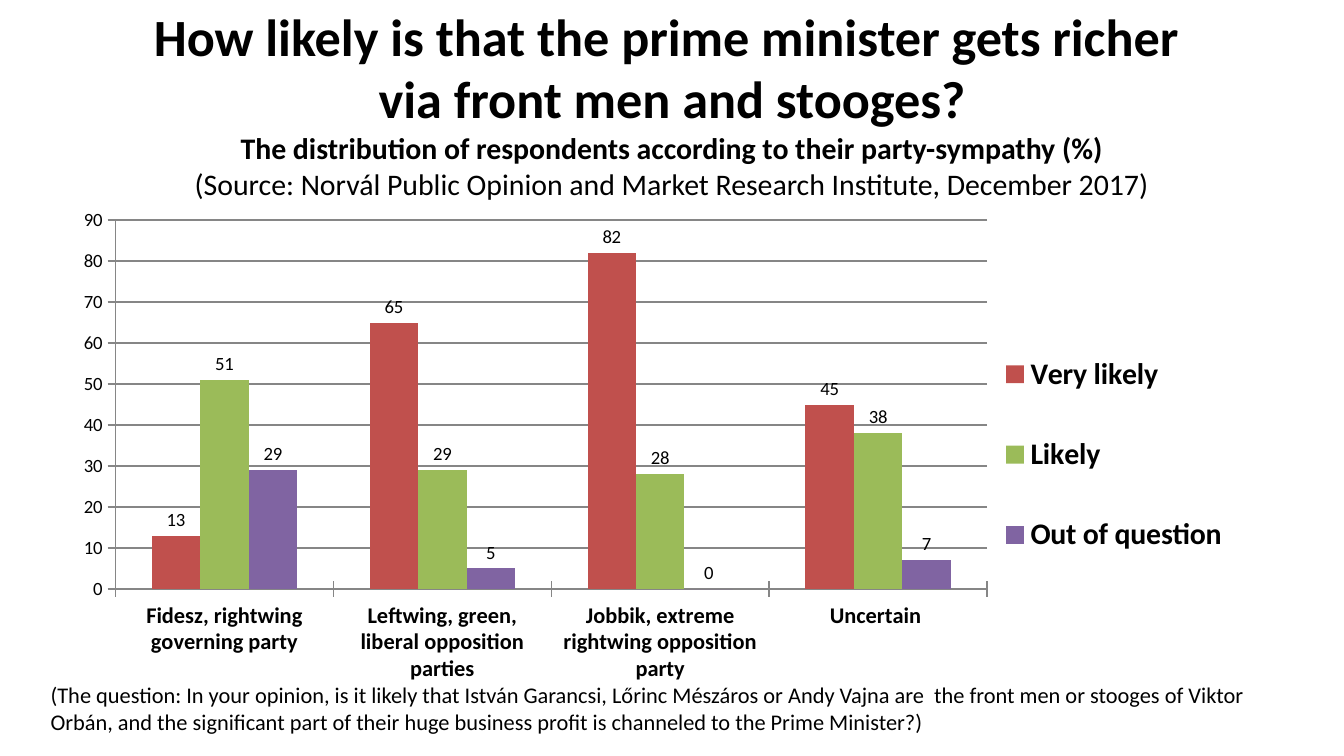
from lxml import etree
from pptx import Presentation
from pptx.chart.data import CategoryChartData
from pptx.dml.color import RGBColor
from pptx.enum.chart import XL_CHART_TYPE, XL_LABEL_POSITION, XL_LEGEND_POSITION, XL_TICK_MARK
from pptx.enum.text import MSO_AUTO_SIZE, PP_ALIGN
from pptx.oxml.ns import qn
from pptx.util import Pt

COLUMN = XL_CHART_TYPE.COLUMN_CLUSTERED
ABOVE = XL_LABEL_POSITION.OUTSIDE_END
RIGHT = XL_LEGEND_POSITION.RIGHT
CROSS = XL_TICK_MARK.CROSS
GROW = MSO_AUTO_SIZE.SHAPE_TO_FIT_TEXT
LEFT, CENTER = PP_ALIGN.LEFT, PP_ALIGN.CENTER

BLACK = RGBColor(0x00, 0x00, 0x00)
GRAY = RGBColor(0x86, 0x86, 0x86)
RED = RGBColor(0xC0, 0x50, 0x4D)
GREEN = RGBColor(0x9B, 0xBB, 0x59)
PURPLE = RGBColor(0x80, 0x64, 0xA2)

PARTIES = [
    "Fidesz, rightwing governing party",
    "Leftwing, green, liberal opposition parties",
    "Jobbik, extreme rightwing opposition party",
    "Uncertain ",
]
ANSWERS = [
    ("Very likely", (13, 65, 82, 45), RED),
    ("Likely", (51, 29, 28, 38), GREEN),
    ("Out of question", (29, 5, 0, 7), PURPLE),
]


def set_layout(part, box, inner=False):
    """Fix a chart part at x, y, w, h, as fractions of the chart."""
    layout = part.find(qn("c:layout"))
    if layout is None:
        layout = etree.Element(qn("c:layout"))
        if inner:
            part.insert(0, layout)
        else:
            part.find(qn("c:legendPos")).addnext(layout)
    manual = etree.SubElement(layout, qn("c:manualLayout"))
    rules = [("layoutTarget", "inner")] if inner else []
    rules += [("xMode", "edge"), ("yMode", "edge")]
    rules += zip("xywh", box)
    for tag, val in rules:
        etree.SubElement(manual, qn(f"c:{tag}")).set("val", str(val))


class Deck:
    def __init__(self, wide, high, face="Calibri", color=BLACK):
        self.prs = Presentation()
        self.prs.slide_width, self.prs.slide_height = Pt(wide), Pt(high)
        self.slide = self.prs.slides.add_slide(self.prs.slide_layouts[6])
        self.face, self.color = face, color

    def style(self, font, size, bold=False):
        font.name, font.size, font.bold = self.face, Pt(size), bold
        font.color.rgb = self.color

    def box(self, x, y, w, h):
        frame = self.slide.shapes.add_textbox(Pt(x), Pt(y), Pt(w), Pt(h)).text_frame
        frame.word_wrap = True
        frame.auto_size = GROW
        return frame

    def text(self, frame, words, size=12, bold=False, align=LEFT):
        """Add a paragraph, using the empty first one when there is one."""
        para = frame.paragraphs[0]
        if para.runs:
            para = frame.add_paragraph()
        para.alignment = align
        run = para.add_run()
        run.text = words
        self.style(run.font, size, bold)

    def chart(self, x, y, w, h, cats, rows):
        data = CategoryChartData()
        data.categories = cats
        for name, vals, _ in rows:
            data.add_series(name, vals)
        chart = self.slide.shapes.add_chart(
            COLUMN, Pt(x), Pt(y), Pt(w), Pt(h), data).chart
        chart.has_title = False
        self.style(chart.font, 10)
        plot = chart.plots[0]
        plot.gap_width, plot.overlap, plot.vary_by_categories = 150, 0, False
        for series, (_, _, color) in zip(plot.series, rows):
            series.format.fill.solid()
            series.format.fill.fore_color.rgb = color
            labels = series.data_labels
            labels.show_value, labels.position = True, ABOVE
            self.style(labels.font, 10)
        self.axes(chart)
        self.legend(chart)
        area = plot._element.getparent()
        set_layout(area, (0.04, 0.023, 0.742, 0.711), inner=True)

    def axes(self, chart):
        cat, val = chart.category_axis, chart.value_axis
        val.minimum_scale, val.maximum_scale, val.major_unit = 0, 90, 10
        val.has_major_gridlines = True
        for line in (cat.format.line, val.format.line, val.major_gridlines.format.line):
            line.color.rgb = GRAY
            line.width = Pt(0.75)
        for axis, size, bold in ((cat, 12, True), (val, 10, False)):
            axis.major_tick_mark = CROSS
            self.style(axis.tick_labels.font, size, bold)

    def legend(self, chart):
        chart.has_legend = True
        legend = chart.legend
        legend.position, legend.include_in_layout = RIGHT, False
        self.style(legend.font, 16, True)
        set_layout(legend._element, (0.78, 0.2, 0.22, 0.55))


def main():
    deck = Deck(720, 405)
    head = deck.box(0, -1.4, 720, 114)
    for words, size, bold in (
        ("How likely is that the prime minister gets richer ", 28, True),
        ("via front men and stooges?", 28, True),
        ("The distribution of respondents according to their party-sympathy (%)", 16, True),
        ("(Source: Norvál Public Opinion and Market Research Institute, December 2017)", 16, False),
    ):
        deck.text(head, words, size=size, bold=bold, align=CENTER)
    note = deck.box(20, 361.4, 680.4, 36)
    deck.text(note, "(The question: In your opinion, is it likely that István Garancsi, "
              "Lőrinc Mészáros or Andy Vajna are  the front men or stooges of Viktor Orbán, "
              "and the significant part of their huge business profit is channeled "
              "to the Prime Minister?)")
    deck.chart(36.7, 111.6, 629.3, 278, PARTIES, ANSWERS)
    deck.prs.save("out.pptx")


if __name__ == "__main__":
    main()
